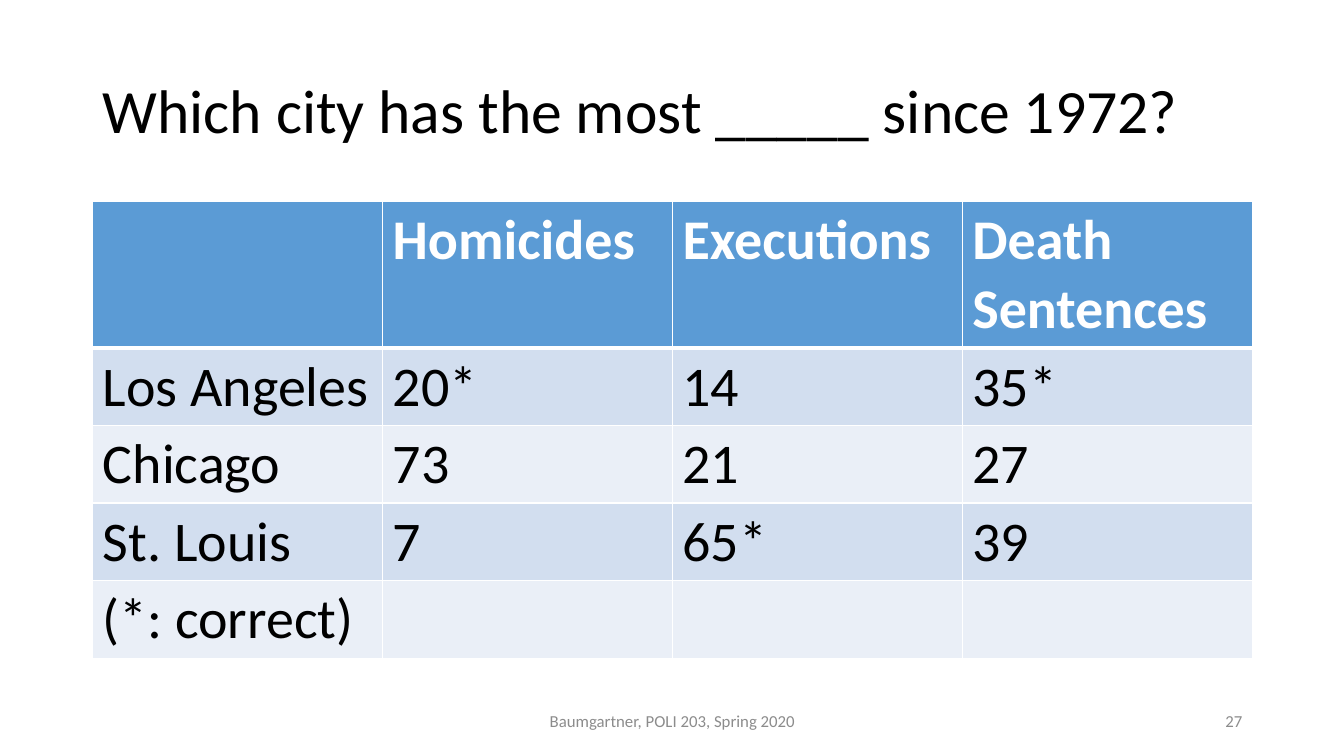
from lxml import etree
from pptx import Presentation
from pptx.dml.color import RGBColor
from pptx.enum.text import MSO_ANCHOR, PP_ALIGN
from pptx.oxml.ns import qn
from pptx.util import Inches, Pt

MIDDLE = MSO_ANCHOR.MIDDLE
LEFT, CENTER, RIGHT = PP_ALIGN.LEFT, PP_ALIGN.CENTER, PP_ALIGN.RIGHT

BLACK = RGBColor(0x00, 0x00, 0x00)
WHITE = RGBColor(0xFF, 0xFF, 0xFF)
GRAY = RGBColor(0x8C, 0x8C, 0x8C)
HEADER_BLUE = RGBColor(0x5B, 0x9B, 0xD5)
BAND_DARK = RGBColor(0xD2, 0xDE, 0xEF)
BAND_LIGHT = RGBColor(0xEA, 0xEF, 0xF7)

TITLE_FORMAT = {"name": "Calibri", "size": Pt(44)}
HEADER_FORMAT = {"name": "Calibri", "size": Pt(40), "bold": True}
BODY_FORMAT = {"name": "Calibri", "size": Pt(40), "bold": False}
FOOTER_FORMAT = {"name": "Calibri", "size": Pt(12)}

CITY_ROWS = [
    ["", "Homicides", "Executions", "Death Sentences"],
    ["Los Angeles", "20*", "14", "35*"],
    ["Chicago", "73", "21", "27"],
    ["St. Louis", "7", "65*", "39"],
    ["(*: correct)", "", "", ""],
]
HEADER_HEIGHT = 1.45
ROW_HEIGHT = 0.77


def write_text(para, text, text_format, color):
    span = para.add_run()
    span.text = text
    for name, value in text_format.items():
        setattr(span.font, name, value)
    span.font.color.rgb = color


def add_text(page, text, place, text_format, color, alignment=LEFT, spacing=1.0):
    box = page.shapes.add_textbox(*map(Inches, place))
    box.text_frame.word_wrap = True
    box.text_frame.vertical_anchor = MIDDLE
    para = box.text_frame.paragraphs[0]
    para.alignment = alignment
    para.line_spacing = spacing
    write_text(para, text, text_format, color)


def set_borders(cell, widths):
    properties = cell._tc.get_or_add_tcPr()
    for index, (side, width) in enumerate(widths.items()):
        line = etree.Element(qn(f"a:ln{side}"), w=str(Pt(width)))
        fill = etree.SubElement(line, qn("a:solidFill"))
        etree.SubElement(fill, qn("a:srgbClr"), val=str(WHITE))
        properties.insert(index, line)


def style_cell(cell, text, row):
    is_header = row == 0
    cell.fill.solid()
    band = BAND_DARK if row % 2 else BAND_LIGHT
    cell.fill.fore_color.rgb = HEADER_BLUE if is_header else band
    set_borders(cell, {"L": 1, "R": 1, "T": 3 if row == 1 else 1, "B": 3 if is_header else 1})
    if text:
        text_format = HEADER_FORMAT if is_header else BODY_FORMAT
        write_text(cell.text_frame.paragraphs[0], text, text_format, WHITE if is_header else BLACK)


def add_city_table(page):
    height = HEADER_HEIGHT + ROW_HEIGHT * (len(CITY_ROWS) - 1)
    frame = page.shapes.add_table(
        len(CITY_ROWS), len(CITY_ROWS[0]), Inches(0.92), Inches(2), Inches(11.5), Inches(height)
    )
    table = frame.table
    for row, texts in enumerate(CITY_ROWS):
        table.rows[row].height = Inches(ROW_HEIGHT if row else HEADER_HEIGHT)
        for column, text in enumerate(texts):
            style_cell(table.cell(row, column), text, row)


def main():
    deck = Presentation()
    deck.slide_width, deck.slide_height = Inches(13.33), Inches(7.5)
    page = deck.slides.add_slide(deck.slide_layouts[6])
    add_text(page, "Which city has the most _____ since 1972?", (0.92, 0.4, 11.5, 1.45),
             TITLE_FORMAT, BLACK, spacing=0.9)
    add_city_table(page)
    add_text(page, "Baumgartner, POLI 203, Spring 2020", (4.42, 6.95, 4.5, 0.4),
             FOOTER_FORMAT, GRAY, CENTER)
    add_text(page, "27", (9.42, 6.95, 3, 0.4), FOOTER_FORMAT, GRAY, RIGHT)
    deck.save("out.pptx")


if __name__ == "__main__":
    main()
